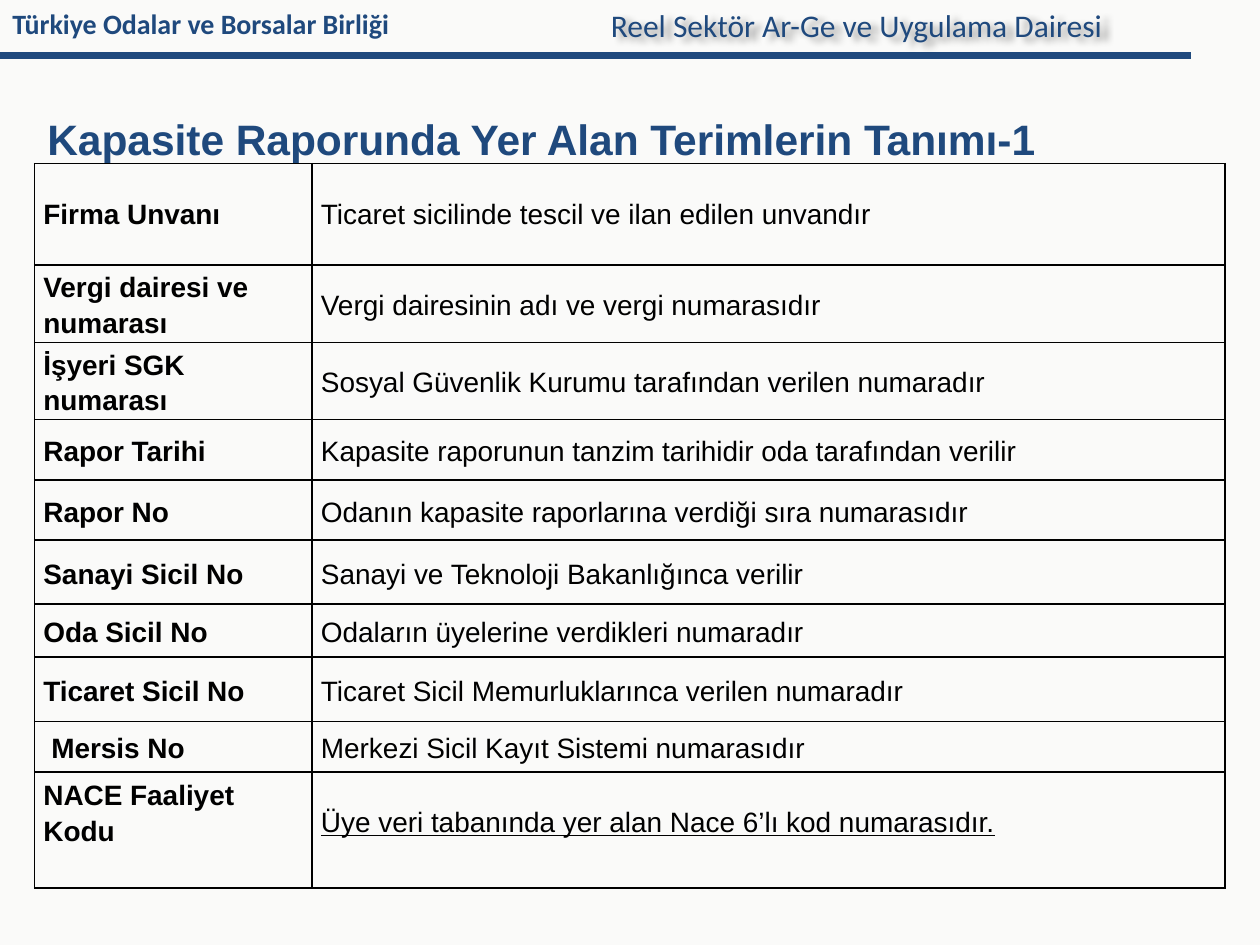
from dataclasses import dataclass

import pptx
import pptx.dml.color
import pptx.enum.shapes
import pptx.enum.text
import pptx.oxml
import pptx.oxml.ns
import pptx.util
from lxml import etree

Pt = pptx.util.Pt
Align = pptx.enum.text.PP_ALIGN
Anchor = pptx.enum.text.MSO_ANCHOR

NAVY = "1F497D"
BLACK = "000000"
BACKGROUND = "FAFAF9"
TABLE_LEFT, TABLE_TOP = 19.8, 93.5
COLUMN_WIDTHS = (158.6, 521.7)
CELL_INSET = 5


@dataclass
class Label:
    text: str
    left: float
    top: float
    width: float
    height: float
    size: float
    font: str
    bold: bool = False
    inset_top: float = 3.6
    line_spacing: float = 1.0


@dataclass
class Term:
    name: str
    definition: str
    height: float
    line_spacing: float = 1.15
    name_indent: float = 0
    underline: bool = False
    top_insets: tuple[float, float] | None = None  # top-aligned cells when given


HEADER = Label("Türkiye Odalar ve Borsalar Birliği", 0, 0, 587, 26.6, 16, "Calibri", True)
TITLE = Label("Kapasite Raporunda Yer Alan Terimlerin Tanımı-1", 20, 54.7, 665, 34,
              24.3, "Arial", True, 5.4, 1.15)
DEPARTMENT = Label("Reel Sektör Ar-Ge ve Uygulama Dairesi", 342, 0, 317.5, 29, 18, "Calibri")

TERMS = [
    Term("Firma Unvanı", "Ticaret sicilinde tescil ve ilan edilen unvandır", 58, 1.0),
    Term("Vergi dairesi ve numarası", "Vergi dairesinin adı ve vergi numarasıdır", 44),
    Term("İşyeri SGK numarası", "Sosyal Güvenlik Kurumu tarafından verilen numaradır", 44),
    Term("Rapor Tarihi", "Kapasite raporunun tanzim tarihidir oda tarafından verilir", 34.6),
    Term("Rapor No", "Odanın kapasite raporlarına verdiği sıra numarasıdır", 34.3),
    Term("Sanayi Sicil No", "Sanayi ve Teknoloji Bakanlığınca verilir", 36.6),
    Term("Oda Sicil No", "Odaların üyelerine verdikleri numaradır", 30.2),
    Term("Ticaret Sicil No", "Ticaret Sicil Memurluklarınca verilen numaradır", 37),
    Term("Mersis No", "Merkezi Sicil Kayıt Sistemi numarasıdır", 28.7, name_indent=4.5),
    Term("NACE Faaliyet Kodu", "Üye veri tabanında yer alan Nace 6’lı kod numarasıdır.", 66.3,
         underline=True, top_insets=(2, 17.4)),
]


def color(value: str) -> pptx.dml.color.RGBColor:
    return pptx.dml.color.RGBColor.from_string(value)


def add_run(paragraph, text: str, size: float, font: str, fill: str, bold: bool):
    run = paragraph.add_run()
    run.text = text
    run.font.size = Pt(size)
    run.font.name = font
    run.font.bold = bold
    run.font.color.rgb = color(fill)
    return run


def add_label(slide, label: Label):
    shape = slide.shapes.add_textbox(
        Pt(label.left), Pt(label.top), Pt(label.width), Pt(label.height))
    frame = shape.text_frame
    frame.word_wrap = True
    frame.margin_top = Pt(label.inset_top)
    paragraph = frame.paragraphs[0]
    paragraph.line_spacing = label.line_spacing
    add_run(paragraph, label.text, label.size, label.font, NAVY, label.bold)
    return shape


def add_soft_shadow(shape) -> None:
    shape._element.spPr.append(pptx.oxml.parse_xml(
        f'<a:effectLst {pptx.oxml.ns.nsdecls("a")}>'
        f'<a:outerShdw blurRad="{Pt(4)}" dist="{Pt(4)}" dir="1200000" algn="ctr">'
        f'<a:srgbClr val="{BLACK}"><a:alpha val="40000"/></a:srgbClr>'
        '</a:outerShdw></a:effectLst>'))


def add_header_rule(slide) -> None:
    connector = slide.shapes.add_connector(
        pptx.enum.shapes.MSO_CONNECTOR.STRAIGHT, Pt(0), Pt(31.8), Pt(680.4), Pt(31.8))
    connector.line.color.rgb = color(NAVY)
    connector.line.width = Pt(4)
    etree.SubElement(connector._element.spPr, pptx.oxml.ns.qn("a:effectLst"))


def set_borders(cell) -> None:
    properties = cell._tc.get_or_add_tcPr()
    for index, side in enumerate(("lnL", "lnR", "lnT", "lnB")):
        properties.insert(index, pptx.oxml.parse_xml(
            f'<a:{side} {pptx.oxml.ns.nsdecls("a")} w="{Pt(1)}">'
            f'<a:solidFill><a:srgbClr val="{BLACK}"/></a:solidFill></a:{side}>'))


def fill_cell(cell, term: Term, column: int) -> None:
    is_name = column == 0
    cell.fill.background()
    set_borders(cell)
    cell.margin_left = Pt(CELL_INSET + (term.name_indent if is_name else 0))
    cell.margin_right = Pt(CELL_INSET)
    cell.margin_top = Pt(term.top_insets[column] if term.top_insets else 0)
    cell.margin_bottom = Pt(0)
    cell.vertical_anchor = Anchor.TOP if term.top_insets else Anchor.MIDDLE
    paragraph = cell.text_frame.paragraphs[0]
    paragraph.alignment = Align.LEFT if is_name else Align.JUSTIFY
    paragraph.line_spacing = term.line_spacing
    text = term.name if is_name else term.definition
    run = add_run(paragraph, text, 16, "Arial", BLACK, is_name)
    if term.underline and not is_name:
        run.font.underline = True


def add_term_table(slide, terms: list[Term]) -> None:
    table = slide.shapes.add_table(
        len(terms), len(COLUMN_WIDTHS), Pt(TABLE_LEFT), Pt(TABLE_TOP),
        Pt(sum(COLUMN_WIDTHS)), Pt(sum(term.height for term in terms))).table
    table.first_row = False
    table.horz_banding = False
    for column, width in zip(table.columns, COLUMN_WIDTHS):
        column.width = Pt(width)
    for row, term in zip(table.rows, terms):
        row.height = Pt(term.height)
        for column, cell in enumerate(row.cells):
            fill_cell(cell, term, column)


def main() -> None:
    presentation = pptx.Presentation()
    presentation.slide_width, presentation.slide_height = Pt(720), Pt(540)
    slide = presentation.slides.add_slide(presentation.slide_layouts[6])
    slide.background.fill.solid()
    slide.background.fill.fore_color.rgb = color(BACKGROUND)

    add_header_rule(slide)
    add_label(slide, HEADER)
    add_label(slide, TITLE)
    add_soft_shadow(add_label(slide, DEPARTMENT))
    add_term_table(slide, TERMS)
    presentation.save("out.pptx")


if __name__ == "__main__":
    main()
